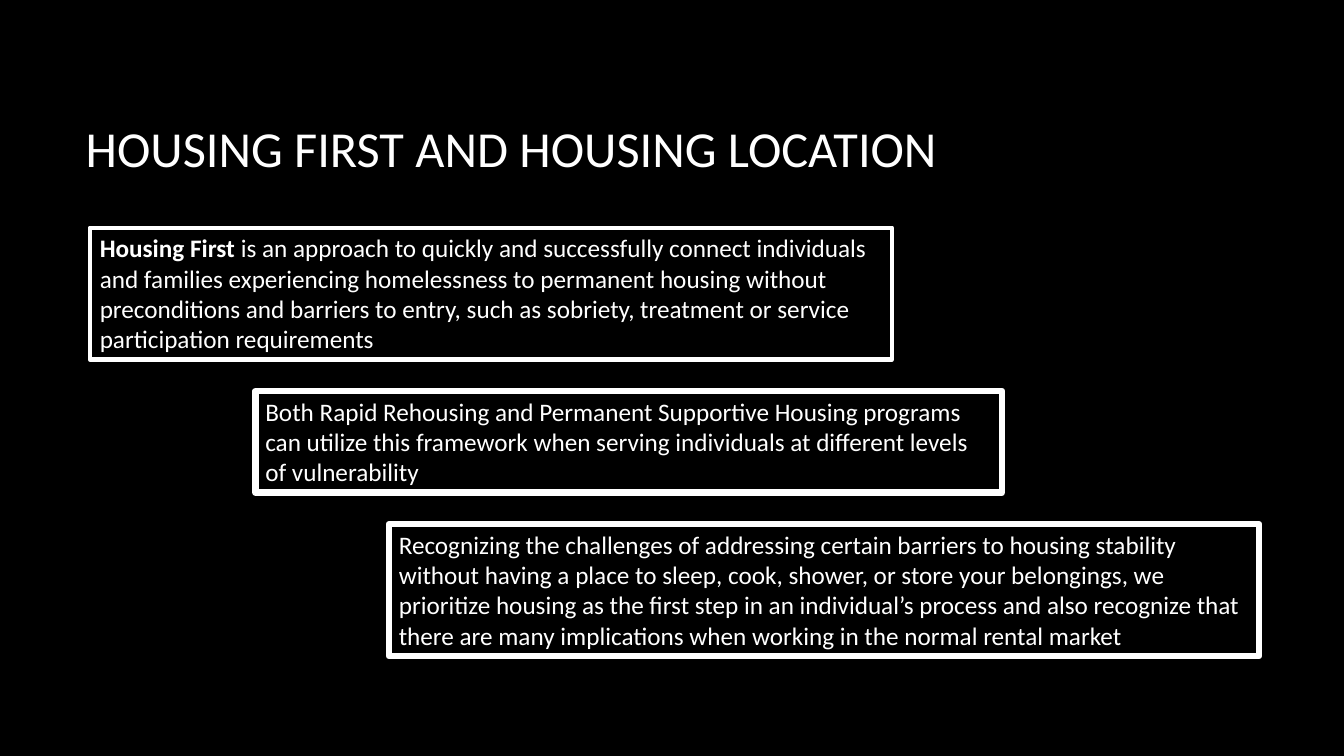
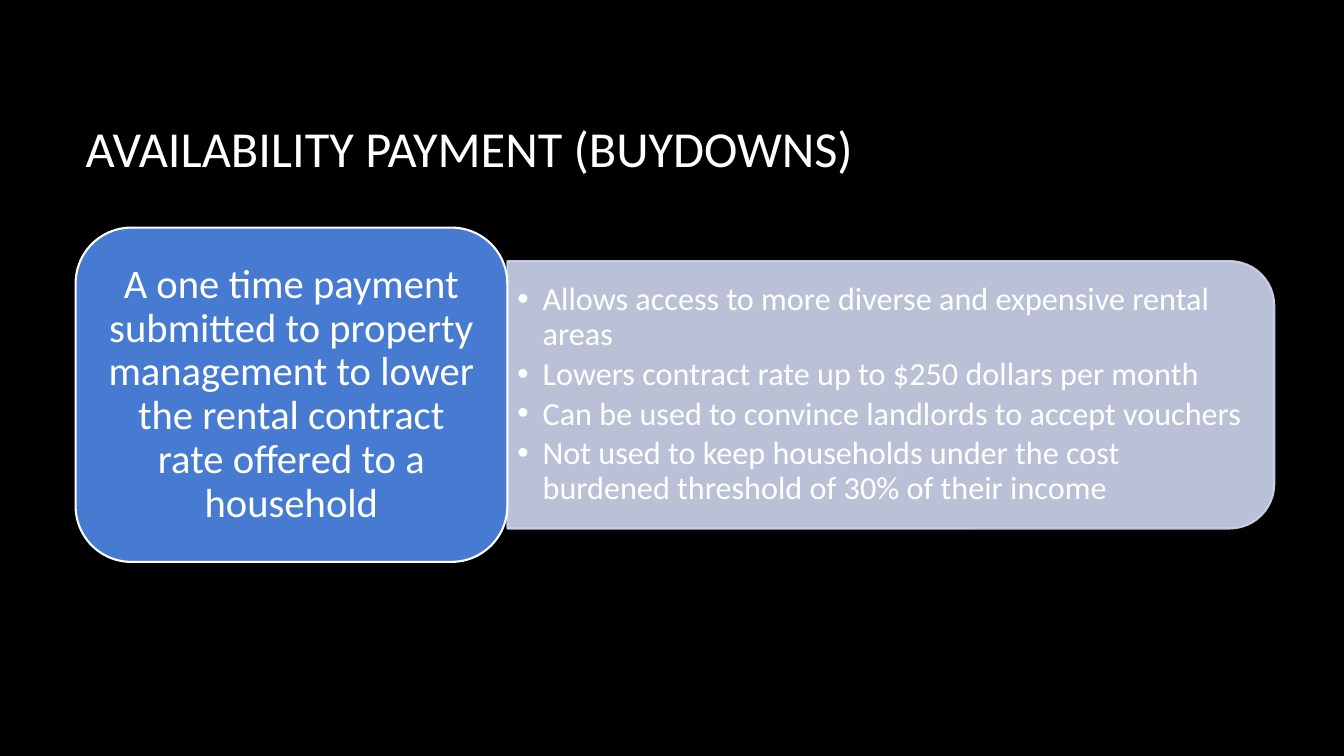
from dataclasses import dataclass

import pptx
import pptx.dml.color
import pptx.enum.shapes
import pptx.enum.text
import pptx.oxml
import pptx.oxml.ns
import pptx.util
from lxml import etree

SLIDE_WIDTH, SLIDE_HEIGHT = 13.333, 7.5
COLUMNS, ROWS = 160, 90
FONT = "Calibri"
BLACK, WHITE, BLUE, PALE_BLUE = "000000", "FFFFFF", "477BD1", "CFD7EE"
TITLE_ONLY, TITLE_AND_BODY = 5, 1
CONTENT_TOP = 27.1
STATEMENT_GAP = 3.75

ANCHOR = pptx.enum.text.MSO_ANCHOR
ALIGN = pptx.enum.text.PP_ALIGN
SHAPE = pptx.enum.shapes.MSO_SHAPE


@dataclass(frozen=True)
class Area:
    column: float
    row: float
    columns: float
    rows: float

    @property
    def middle(self) -> float:
        return self.row + self.rows / 2

    def beside(self, columns: float, rows: float) -> "Area":
        return Area(self.column + self.columns, self.middle - rows / 2, columns, rows)

    def turned(self) -> "Area":
        center = self.column + self.columns / 2
        return Area(center - self.rows / 2, self.middle - self.columns / 2, self.rows, self.columns)


@dataclass(frozen=True)
class Run:
    text: str
    bold: bool = False


@dataclass(frozen=True)
class Statement:
    column: float
    columns: float
    rows: float
    border: float
    runs: tuple[Run, ...]


TITLE_AREA = Area(9, 8, 133, 19)
CALLOUT_AREA = Area(9, CONTENT_TOP, 51.4, 39.8)

STATEMENTS = (
    Statement(10.7, 95.5, 15.7, 3, (
        Run("Housing First ", bold=True),
        Run("is an approach to quickly and successfully connect individuals and families "
            "experiencing homelessness to permanent housing without preconditions and barriers "
            "to entry, such as sobriety, treatment or service participation requirements"),
    )),
    Statement(30.4, 88.9, 12.1, 4.5, (
        Run("Both Rapid Rehousing and Permanent Supportive Housing programs can utilize this "
            "framework when serving individuals at different levels of vulnerability"),
    )),
    Statement(46.3, 103.6, 15.7, 4.5, (
        Run("Recognizing the challenges of addressing certain barriers to housing stability "
            "without having a place to sleep, cook, shower, or store your belongings, we "
            "prioritize housing as the first step in an individual’s process and also recognize "
            "that there are many implications when working in the normal rental market"),
    )),
)
PAYMENT = Run("A one time payment submitted to property management to lower the rental contract "
              "rate offered to a household")
BENEFITS = (
    Run("Allows access to more diverse and expensive rental areas"),
    Run("Lowers contract rate up to $250 dollars per month"),
    Run("Can be used to convince landlords to accept vouchers"),
    Run("Not used to keep households under the cost burdened threshold of 30% of their income"),
)


def color(value: str) -> pptx.dml.color.RGBColor:
    return pptx.dml.color.RGBColor.from_string(value)


def across(columns: float) -> int:
    return pptx.util.Inches(columns * SLIDE_WIDTH / COLUMNS)


def down(rows: float) -> int:
    return pptx.util.Inches(rows * SLIDE_HEIGHT / ROWS)


def bounds(area: Area) -> tuple[int, int, int, int]:
    return across(area.column), down(area.row), across(area.columns), down(area.rows)


def place(placeholder, area: Area) -> None:
    placeholder.left, placeholder.top, placeholder.width, placeholder.height = bounds(area)


def set_frame(frame, anchor, side: float = 0.1, edge: float = 0.05) -> None:
    frame.word_wrap = True
    frame.auto_size = pptx.enum.text.MSO_AUTO_SIZE.NONE
    frame.vertical_anchor = anchor
    frame.margin_left = frame.margin_right = pptx.util.Inches(side)
    frame.margin_top = frame.margin_bottom = pptx.util.Inches(edge)


def write(paragraph, runs: tuple[Run, ...], size: float, align=ALIGN.LEFT) -> None:
    paragraph.alignment = align
    for part in runs:
        run = paragraph.add_run()
        run.text = part.text
        run.font.name = FONT
        run.font.size = pptx.util.Pt(size)
        run.font.bold = part.bold
        run.font.color.rgb = color(WHITE)


def add_panel(slide, kind, area: Area, fill: str | None, line: str, border: float):
    panel = slide.shapes.add_shape(kind, *bounds(area))
    panel.shadow.inherit = False
    if fill is None:
        panel.fill.background()
    else:
        panel.fill.solid()
        panel.fill.fore_color.rgb = color(fill)
    panel.line.color.rgb = color(line)
    panel.line.width = pptx.util.Pt(border)
    return panel


def set_opacity(panel, share: float) -> None:
    for tint in panel.element.spPr.iter(pptx.oxml.ns.qn("a:srgbClr")):
        etree.SubElement(tint, pptx.oxml.ns.qn("a:alpha")).set("val", str(round(share * 100000)))


def add_bullet(paragraph, indent: float) -> None:
    properties = paragraph._p.get_or_add_pPr()
    properties.set("marL", str(pptx.util.Inches(indent)))
    properties.set("indent", str(-pptx.util.Inches(indent)))
    etree.SubElement(properties, pptx.oxml.ns.qn("a:buChar")).set("char", "•")


def add_titled_slide(deck, layout: int, title: str):
    slide = deck.slides.add_slide(deck.slide_layouts[layout])
    heading = slide.shapes.title
    place(heading, TITLE_AREA)
    set_frame(heading.text_frame, ANCHOR.MIDDLE)
    write(heading.text_frame.paragraphs[0], (Run(title),), 36)
    return slide


def build_housing_first(deck) -> None:
    slide = add_titled_slide(deck, TITLE_ONLY, "HOUSING FIRST AND HOUSING LOCATION")
    row = CONTENT_TOP
    for statement in STATEMENTS:
        area = Area(statement.column, row, statement.columns, statement.rows)
        box = add_panel(slide, SHAPE.RECTANGLE, area, None, WHITE, statement.border)
        set_frame(box.text_frame, ANCHOR.TOP)
        write(box.text_frame.paragraphs[0], statement.runs, 18)
        row += statement.rows + STATEMENT_GAP


def build_availability_payment(deck) -> None:
    slide = add_titled_slide(deck, TITLE_AND_BODY, "AVAILABILITY PAYMENT (BUYDOWNS)")

    benefits_area = CALLOUT_AREA.beside(91.3, CALLOUT_AREA.rows * 0.8)
    backdrop = add_panel(slide, SHAPE.ROUND_2_SAME_RECTANGLE, benefits_area.turned(),
                         PALE_BLUE, PALE_BLUE, 1.5)
    backdrop.rotation = 90
    set_opacity(backdrop, 0.9)

    benefits = slide.placeholders[1]
    benefits.element.addprevious(backdrop.element)
    place(benefits, CALLOUT_AREA.beside(89.8, 28.8))
    frame = benefits.text_frame
    set_frame(frame, ANCHOR.MIDDLE)
    for index, benefit in enumerate(BENEFITS):
        paragraph = frame.add_paragraph() if index else frame.paragraphs[0]
        add_bullet(paragraph, 0.25)
        paragraph.line_spacing = 0.9
        paragraph.space_before = pptx.util.Pt(0)
        paragraph.space_after = pptx.util.Pt(3.5)
        write(paragraph, (benefit,), 23)

    payment = add_panel(slide, SHAPE.ROUNDED_RECTANGLE, CALLOUT_AREA, BLUE, WHITE, 1.5)
    set_frame(payment.text_frame, ANCHOR.MIDDLE, 0.12, 0.06)
    definition = payment.text_frame.paragraphs[0]
    definition.line_spacing = 0.9
    write(definition, (PAYMENT,), 29, ALIGN.CENTER)


def main() -> None:
    deck = pptx.Presentation()
    deck.slide_width = pptx.util.Inches(SLIDE_WIDTH)
    deck.slide_height = pptx.util.Inches(SLIDE_HEIGHT)
    backdrop = deck.slide_master.background.fill
    backdrop.solid()
    backdrop.fore_color.rgb = color(BLACK)
    build_housing_first(deck)
    build_availability_payment(deck)
    deck.save("out.pptx")


if __name__ == "__main__":
    main()
